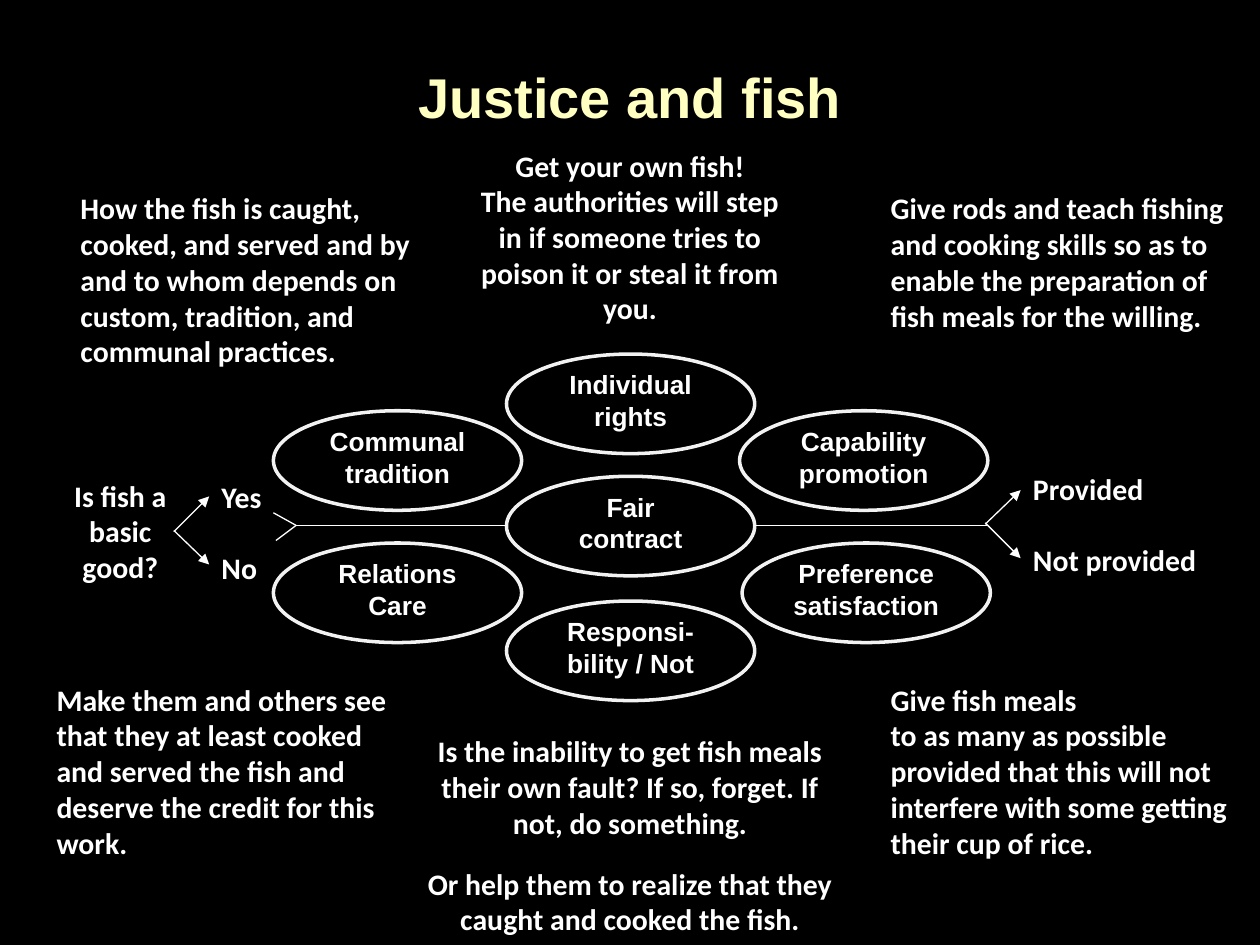
from typing import NamedTuple

from lxml.etree import SubElement
from pptx import Presentation
from pptx.dml.color import RGBColor
from pptx.enum.shapes import MSO_CONNECTOR, MSO_SHAPE
from pptx.enum.text import MSO_ANCHOR, MSO_AUTO_SIZE, PP_ALIGN
from pptx.oxml.ns import qn
from pptx.util import Inches, Pt

COLORS = {"background": "000000", "text": "FFFFFF", "title": "FFFFC2"}
OVAL_WIDTH, OVAL_HEIGHT = 1.97, 0.79
AXIS_Y = 4.17


class Principle(NamedTuple):
    text: str
    left: float
    top: float


class Note(NamedTuple):
    paragraphs: list[str]
    left: float
    top: float
    width: float
    height: float
    align: PP_ALIGN = PP_ALIGN.LEFT


class Line(NamedTuple):
    x1: float
    y1: float
    x2: float
    y2: float
    arrow: bool = False


OUTER_PRINCIPLES = [
    Principle("Responsi-bility / Not", 4.02, 4.77),
    Principle("Individual rights", 4.02, 2.81),
    Principle("Communal tradition", 2.17, 3.26),
    Principle("Preference satisfaction", 5.89, 4.31),
    Principle("Capability promotion", 5.87, 3.26),
    Principle("Relations Care", 2.17, 4.31),
]
FAIR_CONTRACT = Principle("Fair contract", 4.02, 3.78)

NOTES = [
    Note(["Give fish meals", "to as many as possible",
          "provided that this will not interfere with some getting their cup of rice."],
         6.97, 5.36, 3.03, 1.53),
    Note(["Is the inability to get fish meals their own fault? If so, forget. "
          "If not, do something."], 3.19, 5.77, 3.62, 0.96, PP_ALIGN.CENTER),
    Note(["Make them and others see that they at least cooked and served the fish "
          "and deserve the credit for this work."], 0.35, 5.36, 2.99, 1.53),
    Note(["Or help them to realize that they caught and cooked the fish."],
         2.99, 6.82, 4.02, 0.67, PP_ALIGN.CENTER),
    Note(["How the fish is caught, cooked, and served and by and to whom depends on "
          "custom, tradition, and communal practices."], 0.54, 1.46, 3.12, 1.53),
    Note(["Give rods and teach fishing and cooking skills so as to enable the "
          "preparation of fish meals for the willing."], 6.97, 1.46, 2.99, 1.53),
    Note(["Get your own fish!",
          "The authorities will step in if someone tries to poison it or steal it from you."],
         3.62, 1.12, 2.76, 1.53, PP_ALIGN.CENTER),
    Note(["Is fish a", "basic good?"], 0.38, 3.74, 1.15, 0.96, PP_ALIGN.CENTER),
    Note(["Yes"], 1.66, 3.75, 0.63, 0.39),
    Note(["No"], 1.66, 4.31, 0.63, 0.39),
    Note(["Provided"], 8.1, 3.69, 1.9, 0.39),
    Note(["Not provided"], 8.1, 4.25, 1.9, 0.39),
]

BRANCHES = [
    Line(1.38, 4.22, 1.66, 3.94, arrow=True),
    Line(1.38, 4.21, 1.66, 4.48, arrow=True),
    Line(7.82, 4.16, 8.1, 3.89, arrow=True),
    Line(7.82, 4.15, 8.1, 4.43, arrow=True),
]
AXIS = Line(2.35, AXIS_Y, 7.84, AXIS_Y)
AXIS_FORK = [Line(2.35, AXIS_Y, 2.17, 4.07), Line(2.19, 4.29, 2.35, AXIS_Y)]


def color(name: str) -> RGBColor:
    return RGBColor.from_string(COLORS[name])


def add_run(paragraph, text: str, font: str, size: float, color_name: str = "text") -> None:
    run = paragraph.add_run()
    run.text = text
    run.font.name = font
    run.font.size = Pt(size)
    run.font.bold = True
    run.font.color.rgb = color(color_name)


def add_principle(slide, principle: Principle) -> None:
    oval = slide.shapes.add_shape(
        MSO_SHAPE.OVAL, Inches(principle.left), Inches(principle.top),
        Inches(OVAL_WIDTH), Inches(OVAL_HEIGHT))
    oval.shadow.inherit = False
    oval.fill.solid()
    oval.fill.fore_color.rgb = color("background")
    oval.line.color.rgb = color("text")
    oval.line.width = Pt(2)
    # Slightly transparent outline
    outline_color = oval.line._get_or_add_ln().find(".//" + qn("a:srgbClr"))
    SubElement(outline_color, qn("a:alpha"), val="94000")
    frame = oval.text_frame
    frame.word_wrap = True
    frame.vertical_anchor = MSO_ANCHOR.TOP
    frame.margin_top = frame.margin_bottom = 0
    paragraph = frame.paragraphs[0]
    paragraph.alignment = PP_ALIGN.CENTER
    add_run(paragraph, principle.text, "Arial", 15)


def add_note(slide, note: Note) -> None:
    box = slide.shapes.add_textbox(
        Inches(note.left), Inches(note.top), Inches(note.width), Inches(note.height))
    frame = box.text_frame
    frame.word_wrap = True
    frame.auto_size = MSO_AUTO_SIZE.SHAPE_TO_FIT_TEXT
    for index, text in enumerate(note.paragraphs):
        paragraph = frame.add_paragraph() if index else frame.paragraphs[0]
        paragraph.alignment = note.align
        add_run(paragraph, text, "Calibri", 17)


def add_line(slide, line: Line) -> None:
    connector = slide.shapes.add_connector(
        MSO_CONNECTOR.STRAIGHT, Inches(line.x1), Inches(line.y1),
        Inches(line.x2), Inches(line.y2))
    connector.line.color.rgb = color("text")
    connector.line.width = Pt(0.75)
    if line.arrow:
        SubElement(connector.line._get_or_add_ln(), qn("a:tailEnd"), type="triangle")
    SubElement(connector._element.spPr, qn("a:effectLst"))


def main() -> None:
    presentation = Presentation()
    presentation.slide_width = Inches(10)
    presentation.slide_height = Inches(7.5)
    slide = presentation.slides.add_slide(presentation.slide_layouts.get_by_name("Title Only"))
    slide.background.fill.solid()
    slide.background.fill.fore_color.rgb = color("background")

    # Title
    title = slide.shapes.title
    title.left, title.top = Inches(0), Inches(0.14)
    title.width, title.height = Inches(10), Inches(1.25)
    title.text_frame.vertical_anchor = MSO_ANCHOR.MIDDLE
    heading = title.text_frame.paragraphs[0]
    heading.alignment = PP_ALIGN.CENTER
    add_run(heading, "Justice and fish", "Arial", 32, "title")

    # Principles around the centre, and the comments on them
    for principle in OUTER_PRINCIPLES:
        add_principle(slide, principle)
    for note in NOTES:
        add_note(slide, note)

    # Branches and axis, with the central principle over the axis
    for line in [*BRANCHES, AXIS]:
        add_line(slide, line)
    add_principle(slide, FAIR_CONTRACT)
    for line in AXIS_FORK:
        add_line(slide, line)

    presentation.save("out.pptx")


if __name__ == "__main__":
    main()
